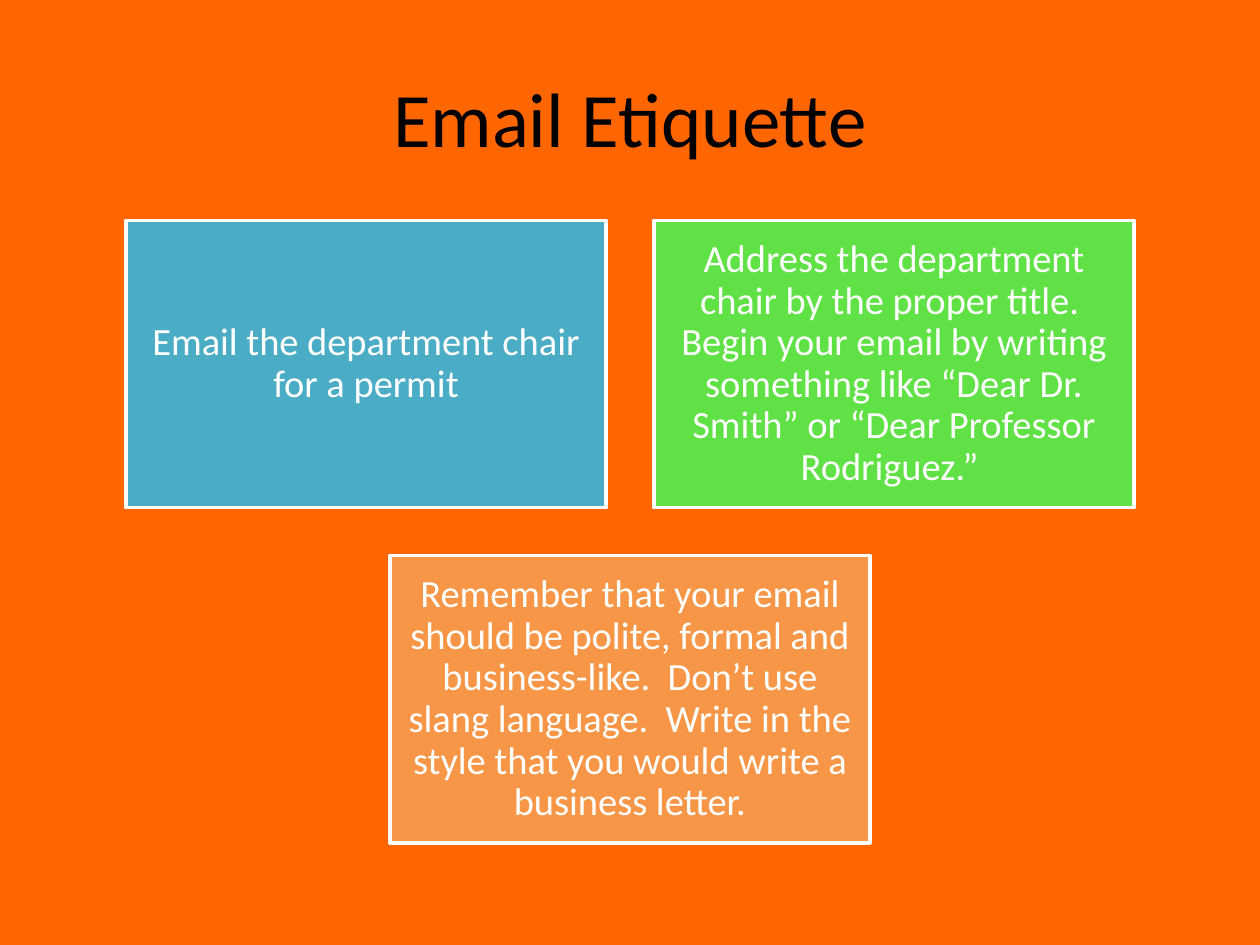
from pptx import Presentation
from pptx.dml.color import RGBColor
from pptx.enum.shapes import MSO_SHAPE
from pptx.enum.text import MSO_ANCHOR, PP_ALIGN
from pptx.util import Inches, Pt

RECT = MSO_SHAPE.RECTANGLE
MIDDLE = MSO_ANCHOR.MIDDLE
CENTER = PP_ALIGN.CENTER

COLORS = {
    "background": "FF6600",
    "title": "000000",
    "white": "FFFFFF",
    "blue": "4BACC6",
    "green": "60E146",
    "orange": "F79646",
}


def rgb(name):
    return RGBColor.from_string(COLORS[name])


def write_text(sp, text, size, color, inset=0.1, spacing=1.0):
    """Fill a shape with one centred paragraph; inset is in inches."""
    tf = sp.text_frame
    tf.word_wrap = True
    tf.vertical_anchor = MIDDLE
    tf.margin_left = tf.margin_right = Inches(inset)
    tf.margin_top = tf.margin_bottom = Inches(inset)
    p = tf.paragraphs[0]
    p.alignment = CENTER
    p.line_spacing = spacing
    r = p.add_run()
    r.text = text
    r.font.name = "Calibri"
    r.font.size = Pt(size)
    r.font.color.rgb = rgb(color)


prs = Presentation()
prs.slide_width = Inches(10)
prs.slide_height = Inches(7.5)
s = prs.slides.add_slide(prs.slide_layouts[6])
s.background.fill.solid()
s.background.fill.fore_color.rgb = rgb("background")

title = s.shapes.add_textbox(Inches(0.5), Inches(0.3), Inches(9), Inches(1.25))
write_text(title, "Email Etiquette", size=44, color="title")

# Two cards in the first row, one centred below
CARD_W, CARD_H, GAP = 3.81, 2.28, 0.38
TOP = 1.75
CARD_ROWS = [
    [
        ("blue", "Email the department chair for a permit"),
        ("green", "Address the department chair by the proper title.  Begin your "
                  "email by writing something like “Dear Dr. Smith” or “Dear "
                  "Professor Rodriguez.” "),
    ],
    [
        ("orange", "Remember that your email should be polite, formal and "
                   "business-like.  Don’t use slang language.  Write in the style "
                   "that you would write a business letter."),
    ],
]

for row, cards in enumerate(CARD_ROWS):
    row_w = len(cards) * CARD_W + (len(cards) - 1) * GAP
    y = TOP + row * (CARD_H + GAP)
    for col, (color, text) in enumerate(cards):
        x = (10 - row_w) / 2 + col * (CARD_W + GAP)
        sp = s.shapes.add_shape(RECT, Inches(x), Inches(y),
                                Inches(CARD_W), Inches(CARD_H))
        sp.shadow.inherit = False
        sp.fill.solid()
        sp.fill.fore_color.rgb = rgb(color)
        sp.line.color.rgb = rgb("white")
        sp.line.width = Pt(2)
        write_text(sp, text, size=22, color="white", inset=0.09, spacing=0.9)

prs.save("out.pptx")
